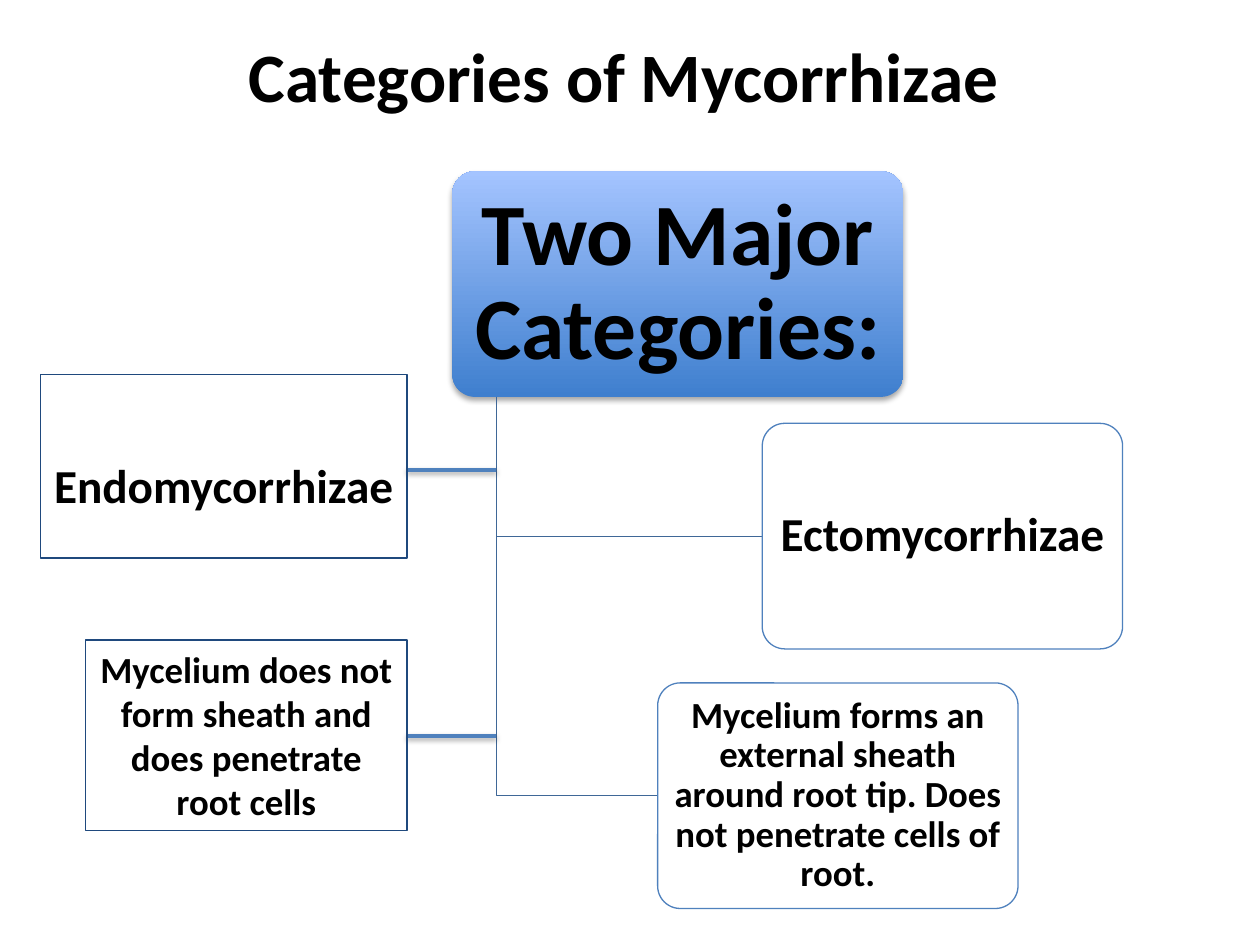
from lxml.etree import SubElement
from pptx import Presentation
from pptx.dml.color import RGBColor
from pptx.enum.shapes import MSO_CONNECTOR, MSO_SHAPE as Shape
from pptx.enum.text import MSO_ANCHOR as Anchor, PP_ALIGN as Align
from pptx.oxml.ns import qn
from pptx.util import Inches, Pt

BLACK = RGBColor(0, 0, 0)
WHITE = RGBColor(0xFF, 0xFF, 0xFF)
BLUE = RGBColor(0x4F, 0x81, 0xBD)
NAVY = RGBColor(0x1F, 0x49, 0x7D)
STEEL = RGBColor(0x3F, 0x67, 0x97)
GRADIENT = (RGBColor(0x3F, 0x7F, 0xCE), RGBColor(0xA4, 0xC4, 0xFF))

# Content: text, size in points, place and insets in inches
TITLE = "Categories of Mycorrhizae"
ROOT = ("Two Major Categories:", 50, (3.59, 1.36, 3.58, 1.79), (0.1, 0.07))
RIGHT_BRANCHES = [
    ("Ectomycorrhizae", 27, (6.05, 3.36, 2.86, 1.79), (0.06, 0.04)),
    ("Mycelium forms an external sheath around root tip. "
     "Does not penetrate cells of root.", 21, (5.22, 5.42, 2.86, 1.79), (0.04, 0.03)),
]
LEFT_BRANCHES = [
    ("Endomycorrhizae", 27, (0.32, 2.97, 2.91, 1.46), (0.1, 0.65)),
    ("Mycelium does not form sheath and does penetrate root cells",
     21, (0.68, 5.08, 2.55, 1.51), (0.1, 0.05)),
]
TRUNK_X = 3.94
LEFT_LINE_Y = (3.73, 5.84)


def write(frame, text, size, spacing=1.0):
    frame.word_wrap = True
    frame.text = text
    para = frame.paragraphs[0]
    para.alignment = Align.CENTER
    para.line_spacing = spacing
    font = para.runs[0].font
    font.name, font.size, font.bold = "Calibri", Pt(size), True
    font.color.rgb = BLACK


def add_shadow(shape, opacity, distance):
    """Give the shape a soft shadow straight below."""
    effects = SubElement(shape._element.spPr, qn("a:effectLst"))
    shadow = SubElement(effects, qn("a:outerShdw"), blurRad=str(Pt(3.1)),
                        dist=str(Pt(distance)), dir="5400000", rotWithShape="0")
    color = SubElement(shadow, qn("a:srgbClr"), val="000000")
    SubElement(color, qn("a:alpha"), val=str(opacity * 1000))


def add_box(kind, text, size, place, insets, line, spacing=1.0):
    box = slide.shapes.add_shape(kind, *map(Inches, place))
    if kind == Shape.ROUNDED_RECTANGLE:
        box.adjustments[0] = 0.1
        box.fill.solid()
        box.fill.fore_color.rgb = WHITE
    else:
        box.fill.background()
    if line is None:
        box.line.fill.background()
    else:
        box.line.color.rgb = line
        box.line.width = Pt(0.75)
    frame = box.text_frame
    frame.margin_left = frame.margin_right = Inches(insets[0])
    frame.margin_top = frame.margin_bottom = Inches(insets[1])
    frame.vertical_anchor = Anchor.MIDDLE
    write(frame, text, size, spacing)
    return box


def add_elbow(*points):
    start, *others = [tuple(map(Inches, point)) for point in points]
    builder = slide.shapes.build_freeform(*start)
    builder.add_line_segments(others, close=False)
    elbow = builder.convert_to_shape()
    elbow.shadow.inherit = False
    elbow.fill.background()
    elbow.line.color.rgb = STEEL
    elbow.line.width = Pt(0.75)


deck = Presentation()
deck.slide_width, deck.slide_height = Inches(10), Inches(7.5)
slide = deck.slides.add_slide(deck.slide_layouts[5])

# Title
title = slide.shapes.title
title.left, title.top, title.width, title.height = map(Inches, (0.45, 0.26, 9, 1.25))
title.text_frame.margin_top = 0
title.text_frame.vertical_anchor = Anchor.TOP
write(title.text_frame, TITLE, 39.6)

# Root box
root = add_box(Shape.ROUNDED_RECTANGLE, *ROOT, None, 0.9)
root.fill.gradient()
root.fill.gradient_angle = 90
for stop, color, position in zip(root.fill.gradient_stops, GRADIENT, (0, 1)):
    stop.color.rgb, stop.position = color, position
add_shadow(root, 35, 1.8)
root_bottom = ROOT[2][1] + ROOT[2][3]

# Right branches, each with an elbow from the root
for text, size, place, insets in RIGHT_BRANCHES:
    left, top, _, height = place
    middle = top + height / 2
    add_elbow((TRUNK_X, root_bottom), (TRUNK_X, middle), (left, middle))
    box = add_box(Shape.ROUNDED_RECTANGLE, text, size, place, insets, BLUE, 0.9)
    box.shadow.inherit = False

# Left branches, each joined to the trunk
for (text, size, place, insets), y in zip(LEFT_BRANCHES, LEFT_LINE_Y):
    edge = place[0] + place[2]
    link = slide.shapes.add_connector(
        MSO_CONNECTOR.STRAIGHT, *map(Inches, (TRUNK_X, y, edge, y)))
    link.line.color.rgb = BLUE
    link.line.width = Pt(2)
    add_shadow(link, 38, 1.6)
    box = add_box(Shape.RECTANGLE, text, size, place, insets, NAVY)
    box.shadow.inherit = False
    box.text_frame.vertical_anchor = Anchor.TOP
    box.text_frame.margin_bottom = Inches(0.05)

deck.save("out.pptx")
